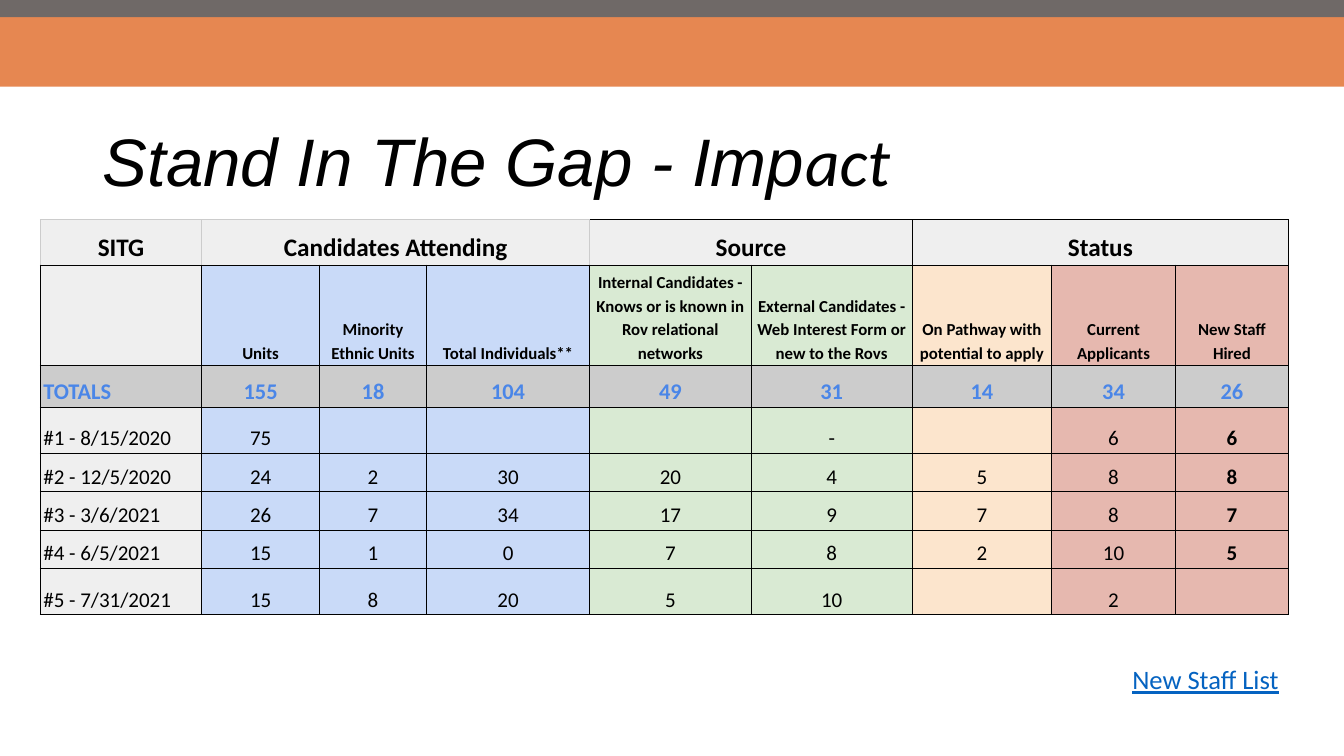
from lxml import etree
from pptx import Presentation
from pptx.dml.color import RGBColor
from pptx.enum.shapes import MSO_SHAPE
from pptx.enum.text import MSO_ANCHOR, MSO_AUTO_SIZE, PP_ALIGN
from pptx.oxml.ns import qn
from pptx.util import Inches, Pt

RECT = MSO_SHAPE.RECTANGLE
MIDDLE, BOTTOM = MSO_ANCHOR.MIDDLE, MSO_ANCHOR.BOTTOM
LEFT, CENTER, RIGHT = PP_ALIGN.LEFT, PP_ALIGN.CENTER, PP_ALIGN.RIGHT
GROW = MSO_AUTO_SIZE.SHAPE_TO_FIT_TEXT

COLORS = {
    "orange": "E68751", "taupe": "6F6967", "black": "000000", "link": "0563C1",
    "light": "EFEFEF", "grey": "CCCCCC", "total": "4A86E8",
    "blue": "C9DAF8", "green": "D9EAD3", "peach": "FCE5CD", "rose": "E6B8AF",
}

WIDTHS = [1.6, 1.17, 1.06, 1.62, 1.6, 1.6, 1.38, 1.23, 1.12]
HEIGHTS = [0.45, 1, 0.41, 0.46, 0.38, 0.38, 0.38, 0.46]
FILLS = ["light"] + ["blue"] * 3 + ["green"] * 2 + ["peach"] + ["rose"] * 2
SPANS = [(1, 3), (4, 5), (6, 8)]
ROWS = [
    ["SITG", "Candidates Attending", "", "", "Source", "", "Status", "", ""],
    ["", "Units", "Minority Ethnic Units", "Total Individuals**",
     "Internal Candidates - Knows or is known in Rov relational networks",
     "External Candidates - Web Interest Form or new to the Rovs",
     "On Pathway with potential to apply", "Current Applicants", "New Staff Hired"],
    ["TOTALS", "155", "18", "104", "49", "31", "14", "34", "26"],
    ["#1 - 8/15/2020", "75", "", "", "", "-", "", "6", "6"],
    ["#2 - 12/5/2020", "24", "2", "30", "20", "4", "5", "8", "8"],
    ["#3 - 3/6/2021", "26", "7", "34", "17", "9", "7", "8", "7"],
    ["#4 - 6/5/2021", "15", "1", "0", "7", "8", "2", "10", "5"],
    ["#5 - 7/31/2021", "15", "8", "20", "5", "10", "", "2", ""],
]


def apply(item, form):
    for name, value in form.items():
        setattr(item, name, value)


def edges(row, col):
    tones = dict.fromkeys("LRTB", "black")
    if row == 0 and col < 4:
        tones.update(L="grey", R="grey", T="grey")
    elif row == 0 and col == 4:
        tones["L"] = "grey"
    return tones


def style(row, col):
    size = {0: 18, 1: 12, 2: 16}.get(row, 15)
    bold = row < 3 or col == 8
    tone = "total" if row == 2 else "black"
    return tone, {"size": Pt(size), "bold": bold, "name": "Calibri"}


class Deck:
    def __init__(self, colors):
        self.colors = colors
        self.file = Presentation()
        apply(self.file, {"slide_width": Inches(13.33), "slide_height": Inches(7.5)})
        self.slide = self.file.slides.add_slide(self.file.slide_layouts[6])

    def paint(self, fill, tone):
        fill.solid()
        fill.fore_color.rgb = RGBColor.from_string(self.colors[tone])

    def band(self, box, tone):
        shape = self.slide.shapes.add_shape(RECT, *map(Inches, box))
        shape.shadow.inherit = False
        self.paint(shape.fill, tone)
        shape.line.fill.background()

    def words(self, para, text, tone, font):
        run = para.add_run()
        run.text = text
        apply(run.font, font)
        run.font.color.rgb = RGBColor.from_string(self.colors[tone])

    def text(self, box, parts, tone, frame, para):
        body = self.slide.shapes.add_textbox(*map(Inches, box)).text_frame
        apply(body, {"word_wrap": True, **frame})
        apply(body.paragraphs[0], para)
        for text, font in parts:
            self.words(body.paragraphs[0], text, tone, font)

    def border(self, cell, tones):
        props = cell._tc.get_or_add_tcPr()
        for side, tone in tones.items():
            line = etree.SubElement(props, qn(f"a:ln{side}"), w=str(Pt(0.83)))
            fill = etree.SubElement(line, qn("a:solidFill"))
            etree.SubElement(fill, qn("a:srgbClr"), val=self.colors[tone])

    def cell(self, cell, text, row, col):
        apply(cell, {
            "vertical_anchor": BOTTOM,
            "margin_left": Inches(0.03), "margin_right": Inches(0.03),
            "margin_top": Inches(0.02), "margin_bottom": Inches(0.02),
        })
        self.border(cell, edges(row, col))
        self.paint(cell.fill, {0: "light", 2: "grey"}.get(row, FILLS[col]))
        para = cell.text_frame.paragraphs[0]
        side = LEFT if col == 0 and row > 1 else CENTER
        apply(para, {"alignment": side, "line_spacing": 1.15})
        if text:
            self.words(para, text, *style(row, col))

    def table(self, left, top):
        box = map(Inches, (left, top, sum(WIDTHS), sum(HEIGHTS)))
        grid = self.slide.shapes.add_table(len(ROWS), len(WIDTHS), *box).table
        apply(grid, {"first_row": False, "horz_banding": False})
        for col, width in zip(grid.columns, WIDTHS):
            col.width = Inches(width)
        for row, height in zip(grid.rows, HEIGHTS):
            row.height = Inches(height)
        for row, line in enumerate(ROWS):
            for col, text in enumerate(line):
                self.cell(grid.cell(row, col), text, row, col)
        for first, last in SPANS:
            grid.cell(0, first).merge(grid.cell(0, last))


def main():
    deck = Deck(COLORS)
    deck.band((0, 0.09, 13.33, 0.77), "orange")
    deck.band((-0.02, 0, 13.35, 0.17), "taupe")
    head = {"size": Pt(48), "italic": True}
    deck.text((0.92, 1.1, 11.5, 1.07),
              [("Stand In The Gap - Imp", {**head, "name": "Arial"}),
               ("act", {**head, "name": "Calibri"})],
              "black", {"vertical_anchor": MIDDLE}, {"line_spacing": 0.9})
    deck.table(0.4, 2.18)
    pad = Inches(0.1)
    deck.text((9.13, 6.48, 3.65, 0.52),
              [("New Staff List", {"size": Pt(19), "name": "Calibri", "underline": True})],
              "link", {"margin_top": pad, "margin_bottom": pad, "auto_size": GROW},
              {"alignment": RIGHT})
    deck.file.save("out.pptx")


if __name__ == "__main__":
    main()
